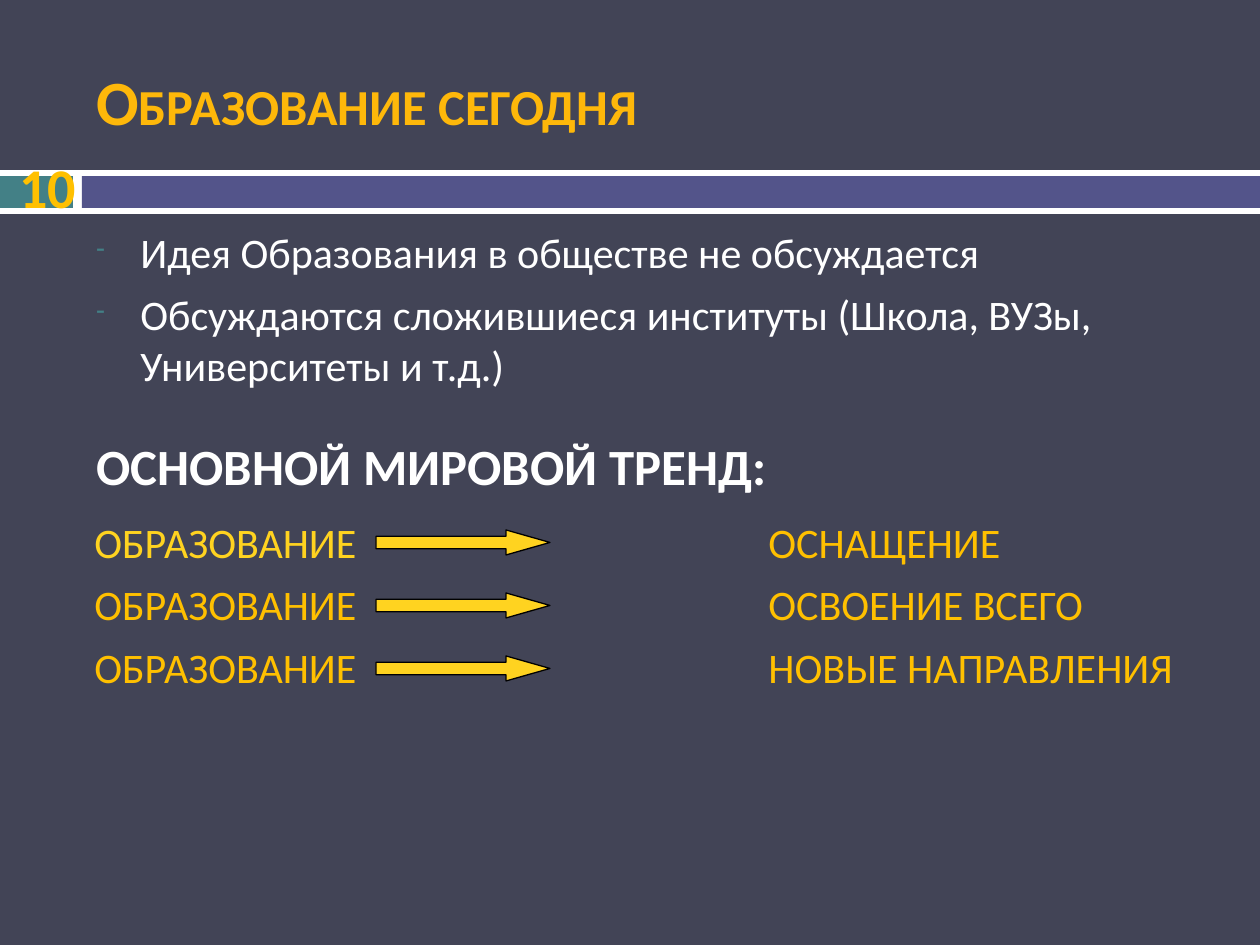
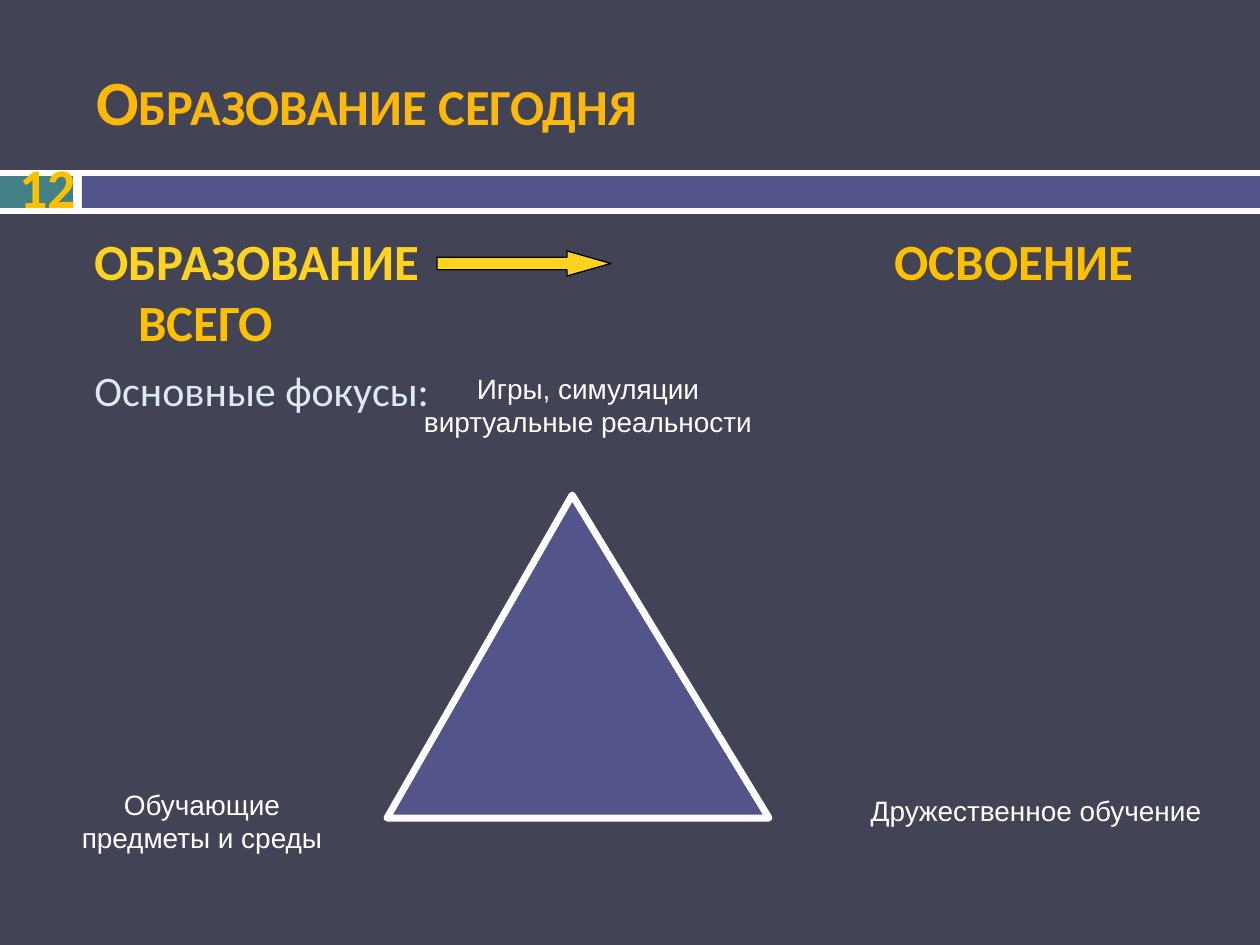
from dataclasses import dataclass

from lxml.etree import SubElement
from pptx import Presentation
from pptx.dml.color import RGBColor
from pptx.enum.shapes import MSO_SHAPE
from pptx.enum.text import MSO_ANCHOR, PP_ALIGN
from pptx.oxml.ns import qn
from pptx.util import Emu, Pt

EMU_PER_PX = 914400 / 126


@dataclass(frozen=True)
class Theme:
    """Colours, fonts and type sizes shared by the slides."""

    background: str = "424456"
    white: str = "FFFFFF"
    black: str = "000000"
    teal: str = "438086"
    violet: str = "53548A"
    title: str = "FEB80A"
    gold: str = "FFC000"
    yellow: str = "FFD320"
    pale: str = "DEE9F0"
    font: str = "Calibri"
    label_font: str = "Arial"
    title_size: int = 36
    number_size: int = 32
    heading_size: int = 29
    body_size: int = 24
    label_size: int = 16
    gap: int = 7
    heading_gap: int = 26
    indent: int = 44


THEME = Theme()


@dataclass(frozen=True)
class Box:
    """A rectangle in px."""

    left: int
    top: int
    width: int
    height: int

    def inner(self, left, top, width, height):
        """Return a box placed relative to this one."""
        return Box(self.left + left, self.top + top, width, height)

    def lengths(self):
        """Return the four lengths in EMU."""
        return [px(value) for value in (self.left, self.top, self.width, self.height)]


@dataclass(frozen=True)
class Span:
    """A piece of text with one format."""

    text: str
    color: str = THEME.white
    size: int = THEME.body_size
    bold: bool = False
    font: str = THEME.font


def px(value):
    """Turn px into EMU."""
    return Emu(round(value * EMU_PER_PX))


def rgb(color):
    """Turn a hex string into a colour."""
    return RGBColor.from_string(color)


def add_figure(page, kind, box, fill, line=None, line_width=0):
    """Add a preset shape with a plain fill and an optional outline."""
    shape = page.shapes.add_shape(kind, *box.lengths())
    shape.shadow.inherit = False
    shape.fill.solid()
    shape.fill.fore_color.rgb = rgb(fill)
    if line:
        shape.line.color.rgb = rgb(line)
        shape.line.width = Pt(line_width)
    else:
        shape.line.fill.background()
    return shape


def add_text(page, box, rows, align=PP_ALIGN.LEFT, anchor=MSO_ANCHOR.TOP):
    """Add a wrapping text box with one paragraph for each row of spans."""
    frame = page.shapes.add_textbox(*box.lengths()).text_frame
    frame.word_wrap = True
    frame.vertical_anchor = anchor
    for index, spans in enumerate(rows):
        para = frame.add_paragraph() if index else frame.paragraphs[0]
        para.alignment = align
        for span in spans:
            run = para.add_run()
            run.text = span.text
            run.font.name = span.font
            run.font.size = Pt(span.size)
            run.font.bold = span.bold
            run.font.color.rgb = rgb(span.color)
    return frame


def hang_paragraphs(frame):
    """Give each paragraph a hanging indent, a gap above and one-inch tabs."""
    for para in frame.paragraphs:
        para.space_before = Pt(THEME.gap)
        properties = para._p.get_or_add_pPr()
        properties.set("marL", str(px(THEME.indent)))
        properties.set("indent", str(-px(THEME.indent)))
        properties.set("defTabSz", "914400")


def add_dash(para):
    """Put a small teal dash in front of a paragraph."""
    properties = para._p.get_or_add_pPr()
    color = SubElement(properties, qn("a:buClr"))
    SubElement(color, qn("a:srgbClr"), val=THEME.teal)
    SubElement(properties, qn("a:buSzPct"), val="60000")
    SubElement(properties, qn("a:buChar"), char="-")


def add_arrow(page, box):
    """Draw a long yellow arrow."""
    arrow = add_figure(page, MSO_SHAPE.RIGHT_ARROW, box, THEME.yellow, THEME.black, 0.75)
    arrow.adjustments[0] = 0.5
    arrow.adjustments[1] = 1.757


def add_band(page, box, number):
    """Draw the band under the title with the slide number."""
    add_figure(page, MSO_SHAPE.RECTANGLE, box, THEME.white)
    add_figure(page, MSO_SHAPE.RECTANGLE, box.inner(0, 6, 73, 32), THEME.teal)
    add_figure(page, MSO_SHAPE.RECTANGLE, box.inner(82, 6, box.width - 82, 32), THEME.violet)
    span = Span(str(number), THEME.gold, THEME.number_size, True)
    add_text(page, box.inner(0, -6, 95, 45), [[span]], PP_ALIGN.CENTER, MSO_ANCHOR.MIDDLE)


def add_title(page, box, text):
    """Write the slide title in small capitals."""
    span = Span(text, THEME.title, THEME.title_size, True)
    frame = add_text(page, box, [[span]], anchor=MSO_ANCHOR.MIDDLE)
    frame.paragraphs[0].runs[0].font._element.set("cap", "small")


def add_page(deck, number):
    """Add a slide with the shared background, band and title."""
    page = deck.slides.add_slide(deck.slide_layouts[6])
    page.background.fill.solid()
    page.background.fill.fore_color.rgb = rgb(THEME.background)
    add_band(page, Box(0, 170, 1260, 44), number)
    add_title(page, Box(84, 32, 1124, 136), "Образование сегодня")
    return page


def add_ideas(page, box):
    """Write the dashed ideas and the heading of the trend."""
    ideas = [
        "Идея Образования в обществе не обсуждается",
        "Обсуждаются сложившиеся институты (Школа, ВУЗы, Университеты и т.д.)",
    ]
    heading = Span("ОСНОВНОЙ МИРОВОЙ ТРЕНД:", size=THEME.heading_size, bold=True)
    frame = add_text(page, box, [[Span(idea)] for idea in ideas] + [[heading]])
    hang_paragraphs(frame)
    for para in frame.paragraphs[:-1]:
        add_dash(para)
    frame.paragraphs[-1].space_before = Pt(THEME.heading_gap)


def add_trends(page, box):
    """List what education turns into, with an arrow in each row."""
    colors = [THEME.yellow, THEME.gold, THEME.gold]
    results = ["ОСНАЩЕНИЕ", "ОСВОЕНИЕ ВСЕГО", "НОВЫЕ НАПРАВЛЕНИЯ"]
    rows = [
        [Span("ОБРАЗОВАНИЕ\t\t\t\t", color), Span(result, THEME.gold)]
        for color, result in zip(colors, results)
    ]
    hang_paragraphs(add_text(page, box, rows))
    for index in range(len(rows)):
        add_arrow(page, box.inner(294, 20 + 63 * index, 174, 25))


def add_focus_heading(page, box):
    """Write the chosen trend with its arrow and the line on focuses."""
    rows = [
        [
            Span("ОБРАЗОВАНИЕ\t\t\t\t", THEME.yellow, THEME.heading_size, True),
            Span("ОСВОЕНИЕ ВСЕГО", THEME.gold, THEME.heading_size, True),
        ],
        [Span("Основные фокусы:", THEME.pale)],
    ]
    hang_paragraphs(add_text(page, box, rows))
    add_arrow(page, box.inner(355, 27, 174, 25))


def add_focus_triangle(page, box):
    """Draw the triangle with a label at each corner."""
    triangle = add_figure(
        page, MSO_SHAPE.ISOSCELES_TRIANGLE, box, THEME.violet, THEME.white, 4
    )
    triangle.adjustments[0] = 0.485
    labels = [
        (201, -130, ["Игры, симуляции", "виртуальные реальности"]),
        (-185, 286, ["Обучающие", "предметы и среды"]),
        (649, 292, ["Дружественное обучение"]),
    ]
    for center, top, lines in labels:
        rows = [[Span(line, size=THEME.label_size, font=THEME.label_font)] for line in lines]
        label_box = box.inner(center - 180, top, 360, 12 + 34 * len(rows))
        add_text(page, label_box, rows, PP_ALIGN.CENTER)


def main():
    """Build and save the deck."""
    deck = Presentation()
    deck.slide_width, deck.slide_height = px(1260), px(945)

    trends_page = add_page(deck, 10)
    add_ideas(trends_page, Box(84, 220, 1128, 241))
    add_trends(trends_page, Box(82, 510, 1167, 244))

    focus_page = add_page(deck, 12)
    add_focus_heading(focus_page, Box(82, 224, 1167, 435))
    add_focus_triangle(focus_page, Box(387, 495, 382, 323))

    deck.save("out.pptx")


if __name__ == "__main__":
    main()
